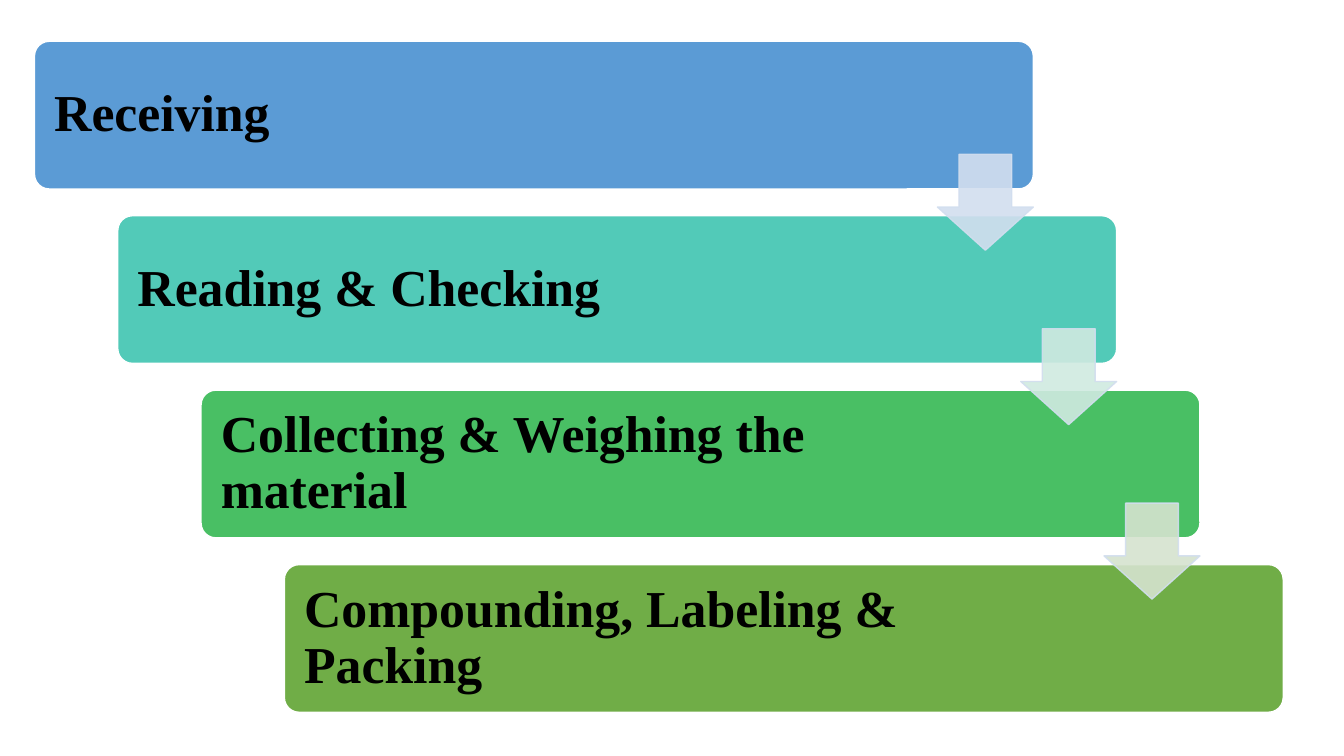
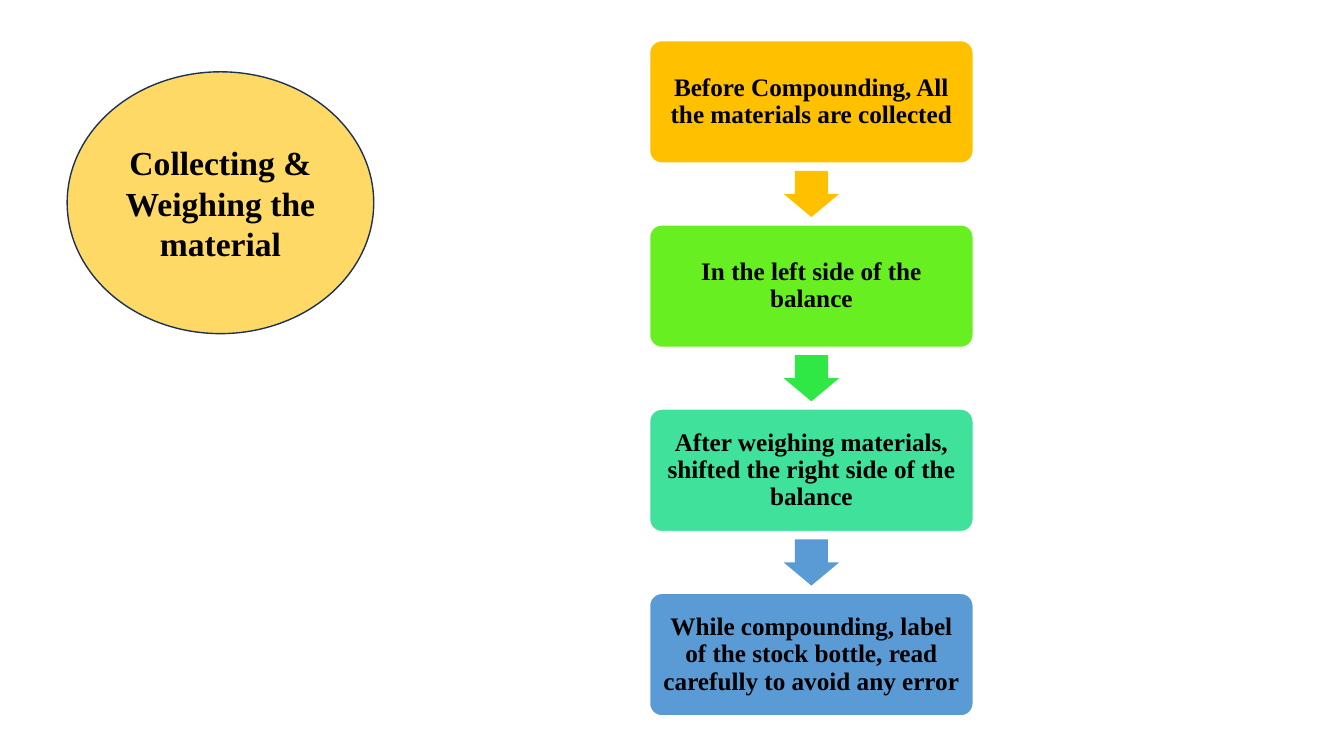
from lxml import etree
from pptx import Presentation
from pptx.dml.color import RGBColor
from pptx.enum.shapes import MSO_SHAPE
from pptx.enum.text import MSO_ANCHOR, PP_ALIGN
from pptx.oxml.ns import qn
from pptx.util import Pt

ROUNDED = MSO_SHAPE.ROUNDED_RECTANGLE
ARROW = MSO_SHAPE.DOWN_ARROW
ELLIPSE = MSO_SHAPE.OVAL
MIDDLE = MSO_ANCHOR.MIDDLE
LEFT, CENTER = PP_ALIGN.LEFT, PP_ALIGN.CENTER

# Content: text, box colour, colour of the arrow that follows
STAIRCASE = [
    ("Receiving", "blue", "pale blue"),
    ("Reading & Checking", "teal", "pale teal"),
    ("Collecting & Weighing the material", "green", "pale green"),
    ("Compounding, Labeling & Packing", "olive", None),
]
TOPIC = "Collecting & Weighing the material"
WEIGHING_STEPS = [
    ("Before Compounding, All the materials are collected", "amber", "amber"),
    ("In the left side of the balance", "lime", "bright green"),
    ("After weighing materials, shifted the right side of the balance", "mint", "blue"),
    ("While compounding, label of the stock bottle, read carefully to avoid any error",
     "blue", None),
]

# Shared style
FONT = "Times New Roman"
COLORS = {
    "black": "000000", "white": "FFFFFF", "navy": "1E3256",
    "blue": "5B9BD5", "teal": "52CAB8", "green": "49BF64", "olive": "70AD47",
    "pale blue": "D2DEEF", "pale teal": "D0EAE1", "pale green": "D5E3CF",
    "amber": "FFC000", "lime": "67EF21", "bright green": "30E845",
    "mint": "3FE19B", "sand": "FFD966",
}
SLIDE_WIDTH, SLIDE_HEIGHT = 960, 540
CORNER = 0.1
ARROW_OPACITY = 90


def color(name):
    return RGBColor.from_string(COLORS[name])


def add_shape(slide, kind, bounds, fill, line=None, adjustments=()):
    shape = slide.shapes.add_shape(kind, *(Pt(length) for length in bounds))
    shape.shadow.inherit = False
    for index, value in enumerate(adjustments):
        shape.adjustments[index] = value
    shape.fill.solid()
    shape.fill.fore_color.rgb = color(fill)
    if line:
        shape.line.color.rgb = color(line)
        shape.line.width = Pt(1)
    else:
        shape.line.fill.background()
    return shape


def set_opacity(shape, percent):
    """Make the fill and the outline of a shape partly transparent."""
    for rgb in shape.fill._xPr.iter(qn("a:srgbClr")):
        etree.SubElement(rgb, qn("a:alpha")).set("val", str(percent * 1000))


def add_text(shape, text, size, align=CENTER, spacing=None, insets=None):
    frame = shape.text_frame
    frame.word_wrap = True
    frame.vertical_anchor = MIDDLE
    if insets:
        (frame.margin_left, frame.margin_top,
         frame.margin_right, frame.margin_bottom) = (Pt(inset) for inset in insets)
    paragraph = frame.paragraphs[0]
    paragraph.alignment = align
    if spacing:
        paragraph.line_spacing = spacing
    run = paragraph.add_run()
    run.text = text
    run.font.name = FONT
    run.font.size = Pt(size)
    run.font.bold = True
    run.font.color.rgb = color("black")


def add_box(slide, bounds, fill, text, size, align, insets):
    box = add_shape(slide, ROUNDED, bounds, fill, "white", [CORNER])
    add_text(box, text, size, align, 0.9, insets)


def build_staircase(slide):
    left, top, width, height = 24.6, 29.5, 713.5, 105.5
    step_x, step_y = 59.5, 124.6
    arrow_size, arrow_x, arrow_y = 68.5, 645, 80.7
    corners = [(left + i * step_x, top + i * step_y) for i in range(len(STAIRCASE))]
    for (x, y), (text, fill, _) in zip(corners, STAIRCASE):
        add_box(slide, (x, y, width, height), fill, text, 37, LEFT, (11, 11, 138, 11))
    # Arrows lie over the boxes
    for (x, y), (_, _, arrow_fill) in zip(corners, STAIRCASE):
        if arrow_fill:
            arrow = add_shape(slide, ARROW,
                              (x + arrow_x, y + arrow_y, arrow_size, arrow_size),
                              arrow_fill, "pale blue", [0.55, 0.45])
            set_opacity(arrow, ARROW_OPACITY)


def build_weighing(slide):
    left, top, width, height, step = 464, 29, 231.2, 87.6, 131.6
    arrow_width, arrow_height = 39.5, 33
    arrow_left = left + (width - arrow_width) / 2
    arrow_offset = (height + step - arrow_height) / 2
    for i, (text, fill, arrow_fill) in enumerate(WEIGHING_STEPS):
        y = top + i * step
        add_box(slide, (left, y, width, height), fill, text, 18, CENTER, (5.3,) * 4)
        if arrow_fill:
            add_shape(slide, ARROW,
                      (arrow_left, y + arrow_offset, arrow_width, arrow_height),
                      arrow_fill, adjustments=[0.6, 0.5])
    topic = add_shape(slide, ELLIPSE, (48, 51.3, 219, 187), "sand", "navy")
    add_text(topic, TOPIC, 24)


def main():
    presentation = Presentation()
    presentation.slide_width = Pt(SLIDE_WIDTH)
    presentation.slide_height = Pt(SLIDE_HEIGHT)
    blank = presentation.slide_layouts[6]
    for build in (build_staircase, build_weighing):
        build(presentation.slides.add_slide(blank))
    presentation.save("out.pptx")


if __name__ == "__main__":
    main()
